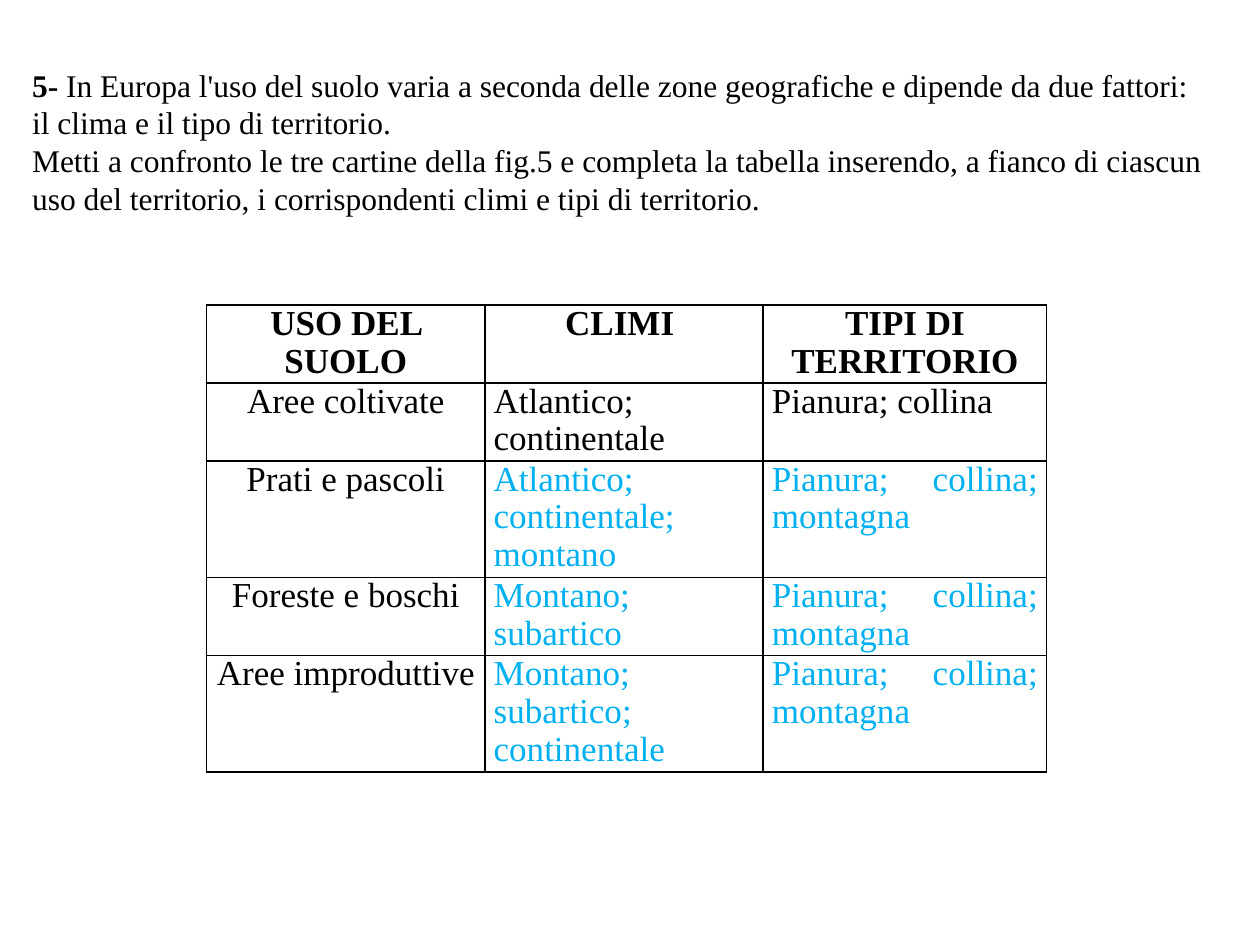
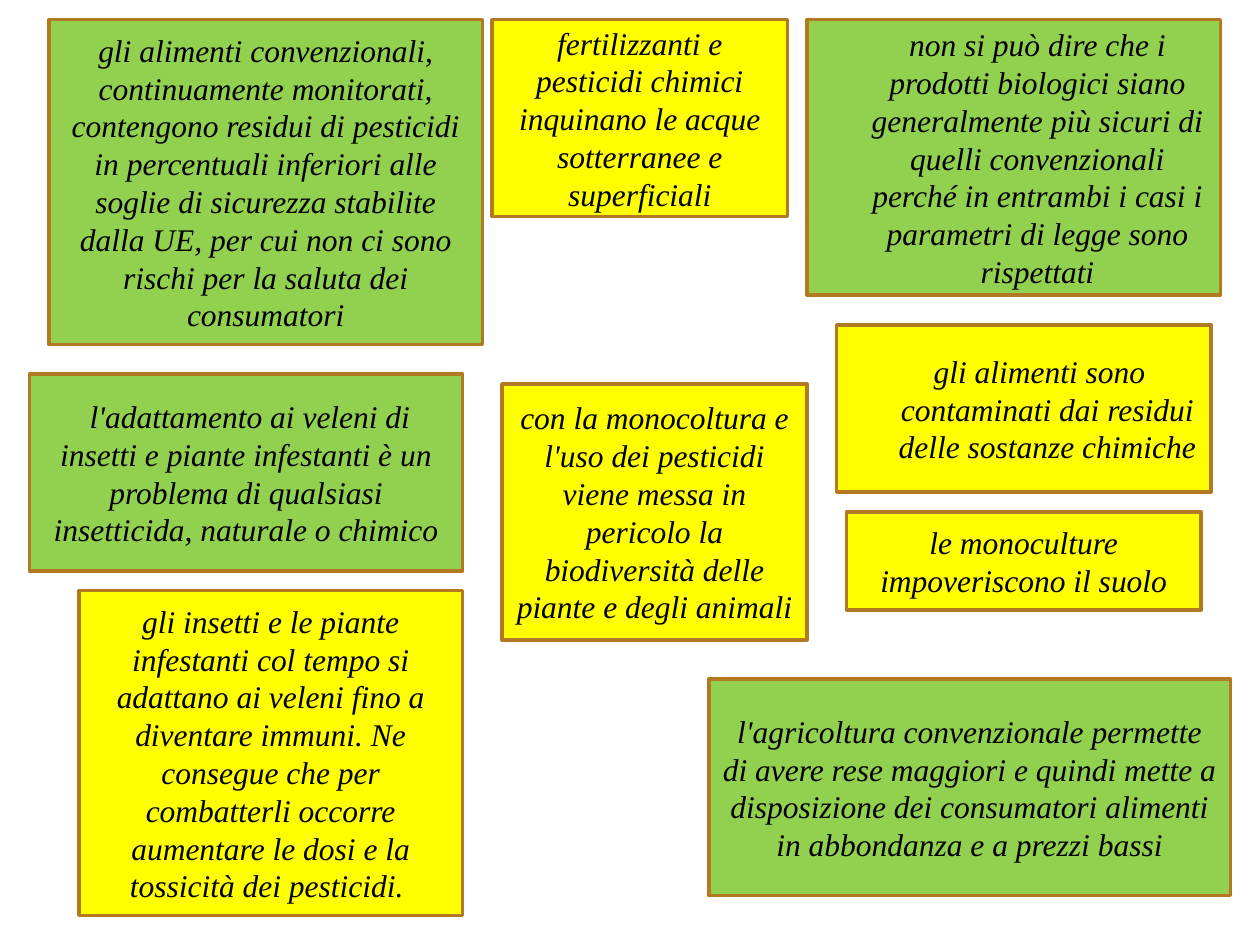
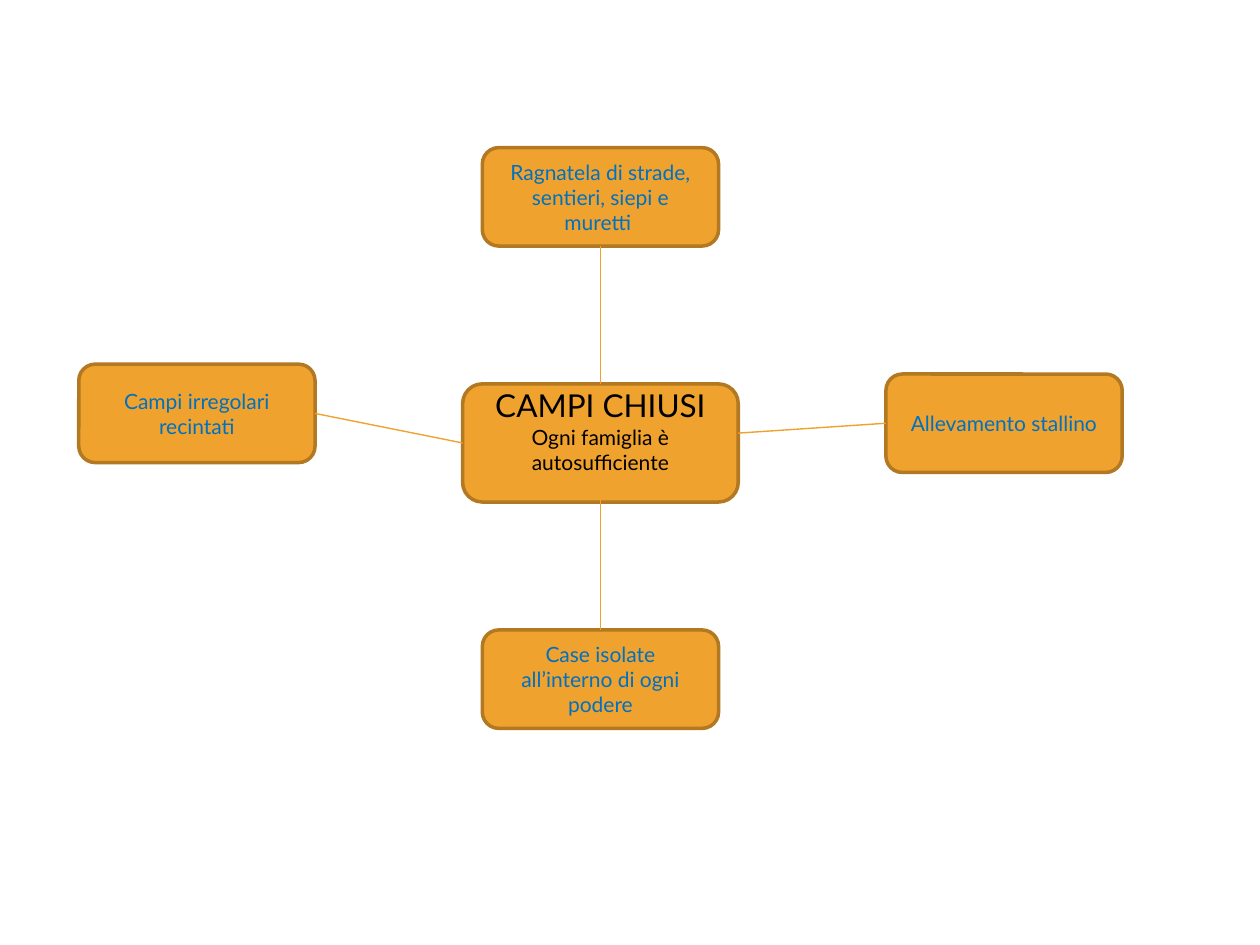
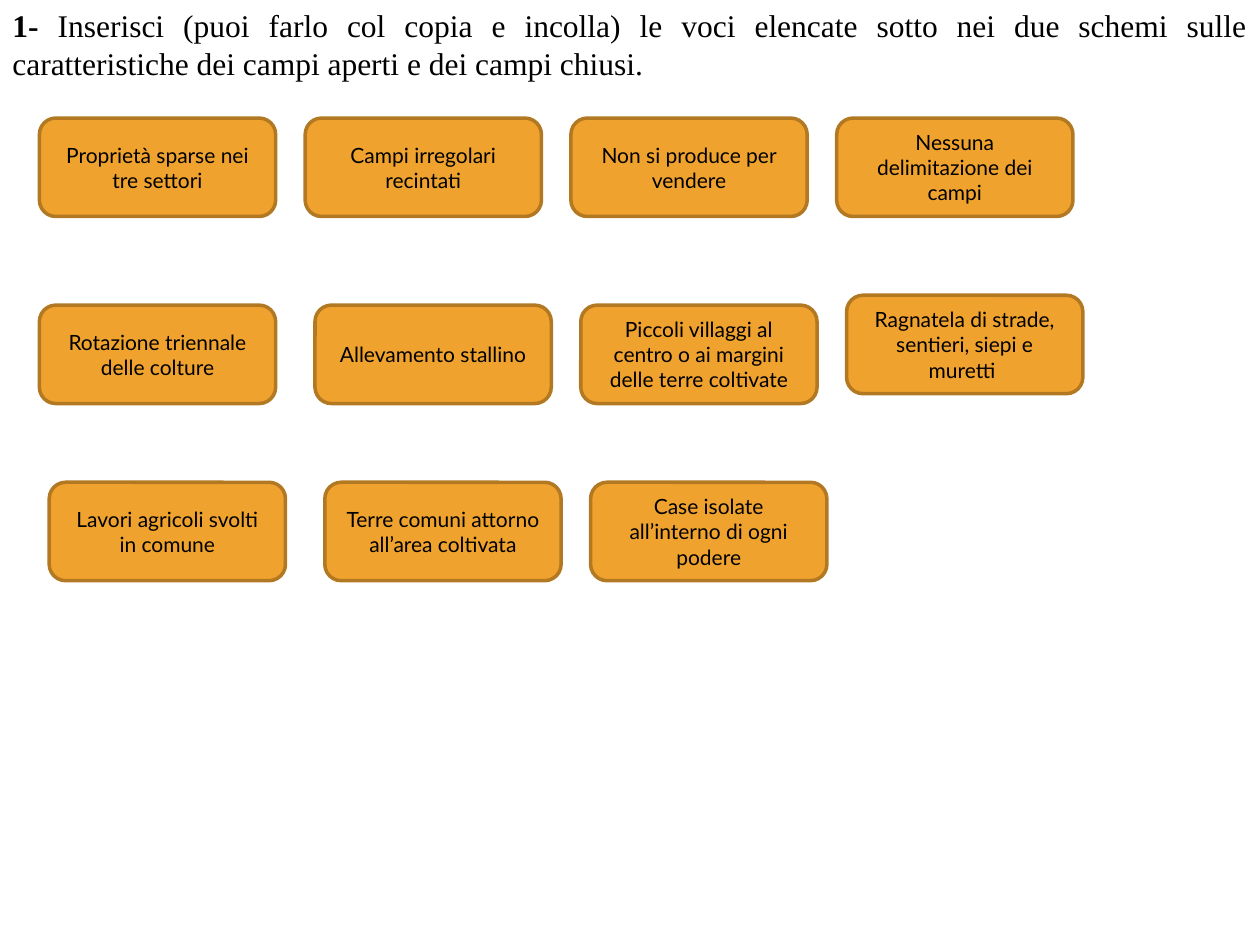
from lxml import etree
from pptx import Presentation
from pptx.dml.color import RGBColor
from pptx.enum import shapes, text
from pptx.oxml import ns
from pptx.util import Pt

BLACK = RGBColor(0x00, 0x00, 0x00)
WHITE = RGBColor(0xFF, 0xFF, 0xFF)
GREEN = RGBColor(0x92, 0xD0, 0x50)
YELLOW = RGBColor(0xFF, 0xFF, 0x00)
ORANGE = RGBColor(0xF0, 0xA2, 0x2E)
BROWN = RGBColor(0xB2, 0x78, 0x22)
BLUE = RGBColor(0x00, 0x70, 0xC0)
ANSWER = RGBColor(0x00, 0xB0, 0xF0)
SERIF, SANS = "Times New Roman", "Lato"
LEFT, CENTER, JUSTIFY = text.PP_ALIGN.LEFT, text.PP_ALIGN.CENTER, text.PP_ALIGN.JUSTIFY
TOP, SIDE_LEFT, BOTTOM, SIDE_RIGHT = range(4)

GRID = 45 / 8  # points per grid step; shapes are placed in whole steps
TAG_SIZE = (24, 10)

LAND_TASK = ("5- ", [
    "In Europa l'uso del suolo varia a seconda delle zone geografiche e dipende da due fattori:",
    "il clima e il tipo di territorio.",
    "Metti a confronto le tre cartine della fig.5 e completa la tabella inserendo, a fianco di ciascun",
    "uso del territorio, i corrispondenti climi e tipi di territorio.",
])
FIELD_TASK = ("1- ", [
    "Inserisci (puoi farlo col copia e incolla) le voci elencate sotto nei due schemi sulle "
    "caratteristiche dei campi aperti e dei campi chiusi.",
])

LAND_USE = [
    ("USO DEL SUOLO", "CLIMI ", "TIPI DI TERRITORIO"),
    ("Aree coltivate", "Atlantico; continentale", "Pianura; collina"),
    ("Prati e pascoli", "Atlantico; continentale; montano", "Pianura; collina; montagna"),
    ("Foreste e boschi", "Montano; subartico", "Pianura; collina; montagna"),
    ("Aree improduttive", "Montano; subartico; continentale", "Pianura; collina; montagna"),
]
COLUMN_WIDTHS = (159, 159, 162)
ROW_LINES = (2, 2, 3, 2, 3)
LINE_HEIGHT = 22.25

# fill, grid place (left, top, width, height), (left margin, first-line indent), wording
ARGUMENTS = [
    (GREEN, (5, 2, 44, 33), (0, 0),
     "gli alimenti convenzionali, continuamente monitorati, contengono residui di pesticidi in "
     "percentuali inferiori alle soglie di sicurezza stabilite dalla UE, per cui non ci sono rischi "
     "per la saluta dei consumatori"),
    (YELLOW, (50, 2, 30, 20), (0, 0),
     "fertilizzanti e pesticidi chimici inquinano le acque sotterranee e superficiali"),
    (GREEN, (82, 2, 42, 28), (27, 0),
     "non si può dire che i prodotti biologici siano generalmente più sicuri di quelli "
     "convenzionali perché in entrambi i casi i parametri di legge sono rispettati"),
    (GREEN, (3, 38, 44, 20), (0, 4.5),
     "l'adattamento ai veleni di insetti e piante infestanti è un problema di qualsiasi "
     "insetticida, naturale o chimico"),
    (YELLOW, (85, 33, 38, 17), (27, -9),
     "gli alimenti sono contaminati dai residui delle sostanze chimiche"),
    (YELLOW, (86, 52, 36, 10), (0, 0), "le monoculture impoveriscono il suolo"),
    (YELLOW, (8, 60, 39, 33), (0, 0),
     "gli insetti e le piante infestanti col tempo si adattano ai veleni fino a diventare immuni. "
     "Ne consegue che per combatterli occorre aumentare le dosi e la tossicità dei pesticidi. "),
    (GREEN, (72, 69, 53, 22), (0, 0),
     "l'agricoltura convenzionale permette di avere rese maggiori e quindi mette a disposizione "
     "dei consumatori alimenti in abbondanza e a prezzi bassi"),
    (YELLOW, (51, 39, 31, 26), (0, 0),
     "con la monocoltura e l'uso dei pesticidi viene messa in pericolo la biodiversità delle "
     "piante e degli animali"),
]

HUB_TITLE, HUB_NOTE = "CAMPI CHIUSI", "Ogni famiglia è autosufficiente"
HUB_PLACE = (47, 39, 28, 12)
FENCED, WEB = "Campi irregolari recintati", "Ragnatela di strade, sentieri, siepi e muretti "
HOUSES, STALLS = "Case isolate all’interno di ogni podere", "Allevamento stallino"
# wording, place, side facing the hub, hub end of the line, hub side joined (None: free end)
FEATURES = [
    (FENCED, (8, 37), SIDE_RIGHT, (47, 45), SIDE_LEFT),
    (WEB, (49, 15), BOTTOM, (61, 39), TOP),
    (HOUSES, (49, 64), TOP, (61, 49), None),
    (STALLS, (90, 38), SIDE_LEFT, (75, 44), None),
]

ENTRIES = [
    ((4, 12), "Proprietà sparse nei tre settori"),
    ((31, 12), FENCED),
    ((58, 12), "Non si produce per vendere"),
    ((85, 12), "Nessuna delimitazione dei campi"),
    ((4, 31), "Rotazione triennale delle colture"),
    ((32, 31), STALLS),
    ((59, 31), "Piccoli villaggi al centro o ai margini delle terre coltivate"),
    ((86, 30), WEB),
    ((5, 49), "Lavori agricoli svolti in comune"),
    ((33, 49), "Terre comuni attorno all’area coltivata"),
    ((60, 49), HOUSES),
]


def steps(values):
    return [Pt(value * GRID) for value in values]


def style(para, name, size, color, align=CENTER, bold=False, italic=False):
    para.alignment = align
    font = para.font
    font.name, font.size, font.bold, font.italic = name, Pt(size), bold, italic
    font.color.rgb = color


def add_box(page, kind, place, fill, wording):
    box = page.shapes.add_shape(kind, *steps(place))
    box.shadow.inherit = False
    box.fill.solid()
    box.fill.fore_color.rgb = fill
    box.line.color.rgb = BROWN
    box.line.width = Pt(2)
    frame = box.text_frame
    frame.word_wrap = True
    frame.vertical_anchor = text.MSO_ANCHOR.MIDDLE
    frame.text = wording
    return box


def add_tag(page, corner, wording, color=BLACK):
    """Add a small rounded box of the common size."""
    tag = add_box(page, shapes.MSO_SHAPE.ROUNDED_RECTANGLE, corner + TAG_SIZE, ORANGE, wording)
    style(tag.text_frame.paragraphs[0], SANS, 12, color)
    return tag


def add_task(page, task, place, align):
    """Add the instruction text with its bold number."""
    number, lines = task
    frame = page.shapes.add_textbox(*map(Pt, place)).text_frame
    frame.word_wrap = True
    for index, line in enumerate(lines):
        para = frame.add_paragraph() if index else frame.paragraphs[0]
        style(para, SERIF, 18, BLACK, align)
        if index == 0:
            span = para.add_run()
            span.text = number
            span.font.bold = True
        para.add_run().text = line


def add_borders(cell):
    properties = cell._tc.get_or_add_tcPr()
    for side in ("lnL", "lnR", "lnT", "lnB"):
        line = etree.SubElement(properties, ns.qn("a:" + side), w=str(Pt(1)))
        fill = etree.SubElement(line, ns.qn("a:solidFill"))
        etree.SubElement(fill, ns.qn("a:srgbClr"), val=str(BLACK))


def add_land_table(page):
    heights = [lines * LINE_HEIGHT for lines in ROW_LINES]
    table = page.shapes.add_table(
        len(LAND_USE), len(COLUMN_WIDTHS), *steps((21, 31)),
        Pt(sum(COLUMN_WIDTHS)), Pt(sum(heights))).table
    table.horz_banding = False
    for column, width in zip(table.columns, COLUMN_WIDTHS):
        column.width = Pt(width)
    for row, height in zip(table.rows, heights):
        row.height = Pt(height)
    for r, words in enumerate(LAND_USE):
        for c, wording in enumerate(words):
            cell = table.cell(r, c)
            add_borders(cell)
            cell.fill.solid()
            cell.fill.fore_color.rgb = WHITE
            cell.margin_left = cell.margin_right = Pt(5)
            cell.margin_top = cell.margin_bottom = 0
            cell.text = wording
            para = cell.text_frame.paragraphs[0]
            para.line_spacing = 0.97
            style(para, SERIF, 20, ANSWER if r > 1 and c else BLACK,
                  JUSTIFY if r and c else CENTER, bold=r == 0)


def add_argument(page, fill, place, indents, wording):
    box = add_box(page, shapes.MSO_SHAPE.RECTANGLE, place, fill, wording)
    para = box.text_frame.paragraphs[0]
    style(para, SERIF, 18, BLACK, italic=True)
    margin, first_line = indents
    properties = para._p.get_or_add_pPr()
    properties.set("marL", str(Pt(margin)))
    properties.set("indent", str(Pt(first_line)))


def add_hub(page):
    hub = add_box(page, shapes.MSO_SHAPE.ROUNDED_RECTANGLE, HUB_PLACE, ORANGE, HUB_TITLE)
    frame = hub.text_frame
    frame.margin_top, frame.margin_bottom = Pt(1.4), Pt(15.8)
    style(frame.paragraphs[0], SANS, 18, BLACK)
    note = frame.add_paragraph()
    note.text = HUB_NOTE
    style(note, SANS, 12, BLACK)
    return hub


def add_link(page, tag, tag_side, hub, hub_end, hub_side):
    x, y = steps(hub_end)
    link = page.shapes.add_connector(shapes.MSO_CONNECTOR.STRAIGHT, x, y, x, y)
    link.begin_connect(tag, tag_side)
    if hub_side is not None:
        link.end_connect(hub, hub_side)
    link.line.color.rgb = ORANGE
    link.line.width = Pt(0.79)
    etree.SubElement(link._element.spPr, ns.qn("a:effectLst"))


def main():
    deck = Presentation()
    deck.slide_width, deck.slide_height = Pt(720), Pt(540)
    land, debate, closed, fields = [deck.slides.add_slide(deck.slide_layouts[6]) for _ in range(4)]

    add_land_table(land)
    add_task(land, LAND_TASK, (11.25, 34, 690, 116.5), LEFT)

    for argument in ARGUMENTS:
        add_argument(debate, *argument)

    hub = add_hub(closed)
    for wording, corner, tag_side, hub_end, hub_side in FEATURES:
        tag = add_tag(closed, corner, wording, BLUE)
        add_link(closed, tag, tag_side, hub, hub_end, hub_side)

    add_task(fields, FIELD_TASK, (0, 0, 720, 51), JUSTIFY)
    for corner, wording in ENTRIES:
        add_tag(fields, corner, wording)

    deck.save("out.pptx")


if __name__ == "__main__":
    main()
